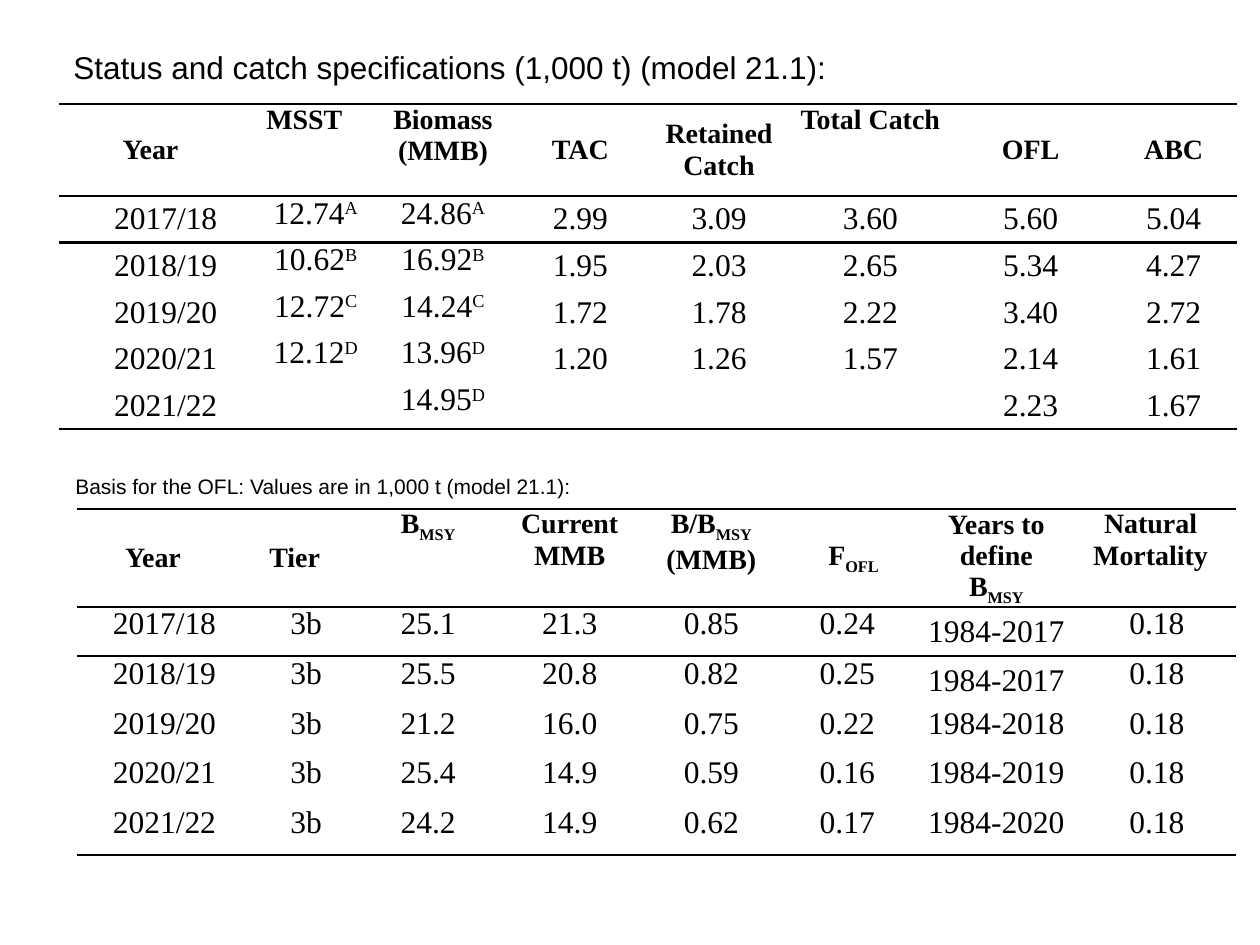
from itertools import accumulate

from pptx import Presentation
from pptx.dml.color import RGBColor
from pptx.enum.text import MSO_ANCHOR as Anchor, MSO_AUTO_SIZE as AutoSize, PP_ALIGN as Align
from pptx.oxml import parse_xml
from pptx.oxml.ns import nsdecls
from pptx.util import Cm, Pt

THEME = {
    "ink": "000000", "heading_font": "Arial", "table_font": "Times New Roman",
    "title": 18, "caption": 12, "header": 16, "body": 18, "rule": 1.5,
    "plain_table": "{2D5ABB26-0587-4C30-8999-92F81FD0307C}",
}
ANCHORS = {"t": Anchor.TOP, "m": Anchor.MIDDLE}

TITLE = "Status and catch specifications (1,000 t) (model 21.1):"
CAPTION = "Basis for the OFL: Values are in 1,000 t (model 21.1):"

# In cell text, every second part between bars is raised or lowered.
# Anchors hold one letter per cell: t for top, m for middle.
STATUS = {
    "left": 1.19, "top": 2.1, "header_height": 1.85, "row_height": 0.94,
    "widths": [3.56, 0.28, 2.31, 2.82, 2.72, 2.87, 3.23, 3.23, 2.54],
    "header_spans": [1, 2, 1, 1, 1, 1, 1, 1],
    "body_spans": [2, 1, 1, 1, 1, 1, 1, 1],
    "year_indents": (0.13, 0.28),
    "anchors": ["mttmmtmm"] + ["mttmmmmm"] * 5,
    "rows": [
        ["Year", "MSST", "Biomass (MMB)", "TAC", "Retained Catch", "Total Catch", "OFL", "ABC"],
        ["2017/18", "12.74|A", "24.86|A", "2.99", "3.09", "3.60", "5.60", "5.04"],
        ["2018/19", "10.62|B", "16.92|B", "1.95", "2.03", "2.65", "5.34", "4.27"],
        ["2019/20", "12.72|C", "14.24|C", "1.72", "1.78", "2.22", "3.40", "2.72"],
        ["2020/21", "12.12|D", "13.96|D", "1.20", "1.26", "1.57", "2.14", "1.61"],
        ["2021/22", "", "14.95|D", "", "", "", "2.23", "1.67"],
    ],
}
BASIS = {
    "left": 1.55, "top": 10.26, "header_height": 1.96, "row_height": 1.0,
    "widths": [3.07, 0.25, 2.18, 2.74, 2.97, 2.74, 2.74, 0.25, 2.77, 0.25, 3.2],
    "header_spans": [1, 2, 1, 1, 1, 2, 1, 2],
    "body_spans": [2, 1, 1, 1, 1, 1, 3, 1],
    "year_indents": (0, 0),
    "anchors": ["mmtttmmt"] + ["ttttttmt"] * 2 + ["tttttttt"] * 3,
    "rows": [
        ["Year", "Tier", "B|MSY", "Current\nMMB", "B/B|MSY| (MMB)", "F|OFL",
         "Years to define B|MSY", "Natural\nMortality"],
        ["2017/18", "3b", "25.1", "21.3", "0.85", "0.24", "1984-2017", "0.18"],
        ["2018/19", "3b", "25.5", "20.8", "0.82", "0.25", "1984-2017", "0.18"],
        ["2019/20", "3b", "21.2", "16.0", "0.75", "0.22", "1984-2018", "0.18"],
        ["2020/21", "3b", "25.4", "14.9", "0.59", "0.16", "1984-2019", "0.18"],
        ["2021/22", "3b", "24.2", "14.9", "0.62", "0.17", "1984-2020", "0.18"],
    ],
}


def set_font(paragraph, name, size, bold=False):
    font = paragraph.font
    font.name, font.size, font.bold = name, Pt(size), bold
    font.color.rgb = RGBColor.from_string(THEME["ink"])


def write_heading(shape, text, size, box, left_inset):
    shape.left, shape.top, shape.width, shape.height = (Cm(value) for value in box)
    frame = shape.text_frame
    frame.text = text
    frame.word_wrap, frame.auto_size = True, AutoSize.NONE
    frame.vertical_anchor, frame.margin_left = Anchor.MIDDLE, Cm(left_inset)
    paragraph = frame.paragraphs[0]
    paragraph.alignment = Align.LEFT
    set_font(paragraph, THEME["heading_font"], size)


def write_cell(cell, text, is_header, anchor, indent):
    cell.margin_left = cell.margin_right = Cm(0.18)
    cell.vertical_anchor = ANCHORS[anchor]
    frame = cell.text_frame
    for number, line in enumerate(text.split("\n")):
        paragraph = frame.add_paragraph() if number else frame.paragraphs[0]
        paragraph.alignment = Align.CENTER
        set_font(paragraph, THEME["table_font"], THEME["header" if is_header else "body"], is_header)
        if indent:
            paragraph._p.get_or_add_pPr().set("marL", str(Cm(indent)))
        for part_number, part in enumerate(line.split("|")):
            if not part:
                continue
            run = paragraph.add_run()
            run.text = part
            if part_number % 2:
                run.font._element.set("baseline", "-25000" if is_header else "30000")


def rule_cell(cell, sides):
    """Draw the given sides, listed in schema order, ahead of the cell's fill."""
    properties = cell._tc.get_or_add_tcPr()
    for side in reversed(sides):
        properties.insert(0, parse_xml(
            f'<a:ln{side} {nsdecls("a")} w="{Pt(THEME["rule"])}"><a:solidFill>'
            f'<a:srgbClr val="{THEME["ink"]}"/></a:solidFill></a:ln{side}>'))


def add_data_table(slide, data):
    rows, widths = data["rows"], data["widths"]
    heights = [data["header_height"]] + [data["row_height"]] * (len(rows) - 1)
    frame = slide.shapes.add_table(len(rows), len(widths), Cm(data["left"]), Cm(data["top"]),
                                   Cm(sum(widths)), Cm(sum(heights)))
    table = frame.table
    table.first_row = table.horz_banding = False
    table._tbl.tblPr.find("{*}tableStyleId").text = THEME["plain_table"]
    for column, width in zip(table.columns, widths):
        column.width = Cm(width)

    sides = {0: "TB", 1: "T", len(rows) - 1: "B"}
    for row_number, (texts, anchors) in enumerate(zip(rows, data["anchors"])):
        is_header = row_number == 0
        table.rows[row_number].height = Cm(heights[row_number])
        for cell in table.rows[row_number].cells:
            cell.margin_top = cell.margin_bottom = 0
            cell.fill.background()
            rule_cell(cell, sides.get(row_number, ""))

        spans = data["header_spans" if is_header else "body_spans"]
        year_indent = data["year_indents"][0 if is_header else 1]
        for end, span, text, anchor in zip(accumulate(spans), spans, texts, anchors):
            start = end - span
            cell = table.cell(row_number, start)
            if span > 1:
                cell.merge(table.cell(row_number, end - 1))
            write_cell(cell, text, is_header, anchor, 0 if start else year_indent)


def main():
    presentation = Presentation()
    presentation.slide_width, presentation.slide_height = Cm(25.4), Cm(19.05)
    slide = presentation.slides.add_slide(presentation.slide_layouts[5])
    write_heading(slide.shapes.title, TITLE, THEME["title"], (0.64, 0.84, 24.5, 1.02), 0.84)
    add_data_table(slide, STATUS)
    caption = slide.shapes.add_textbox(0, 0, 0, 0)
    write_heading(caption, CAPTION, THEME["caption"], (1.27, 9.4, 23, 0.8), 0.25)
    add_data_table(slide, BASIS)
    presentation.save("out.pptx")


if __name__ == "__main__":
    main()
